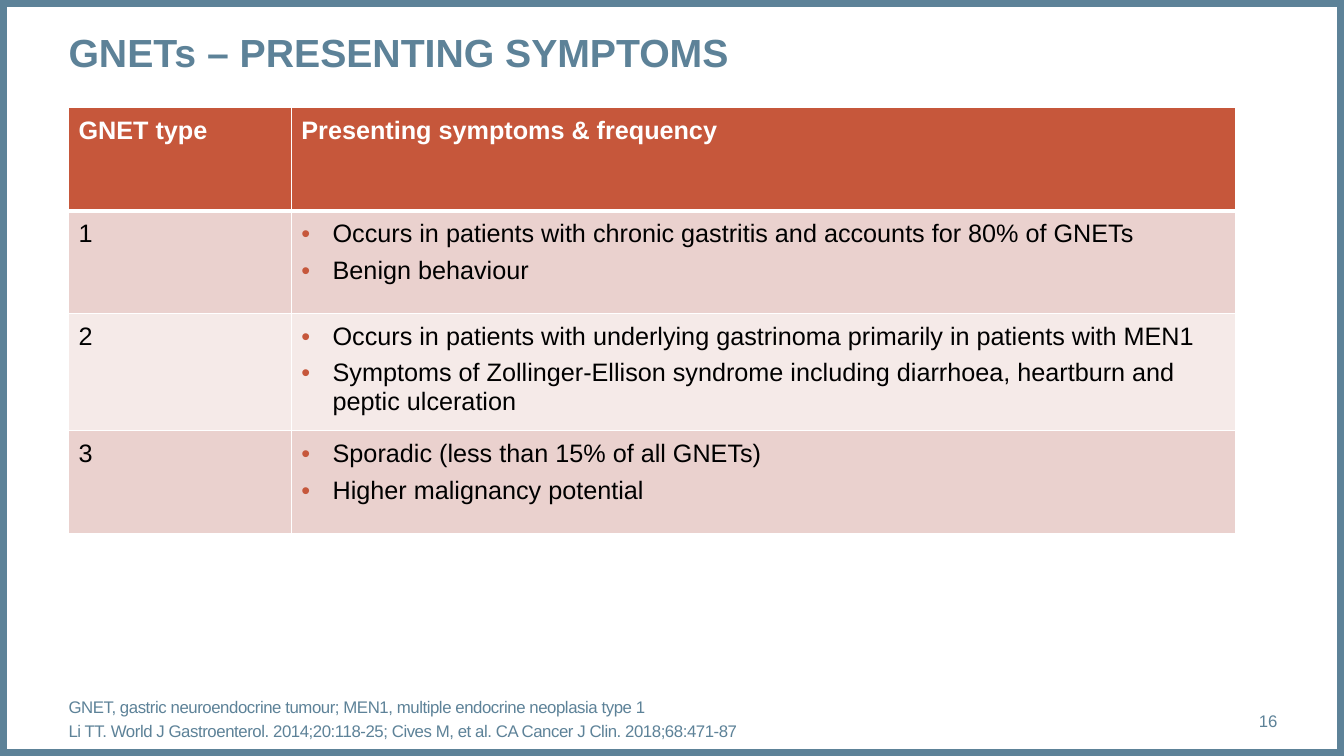
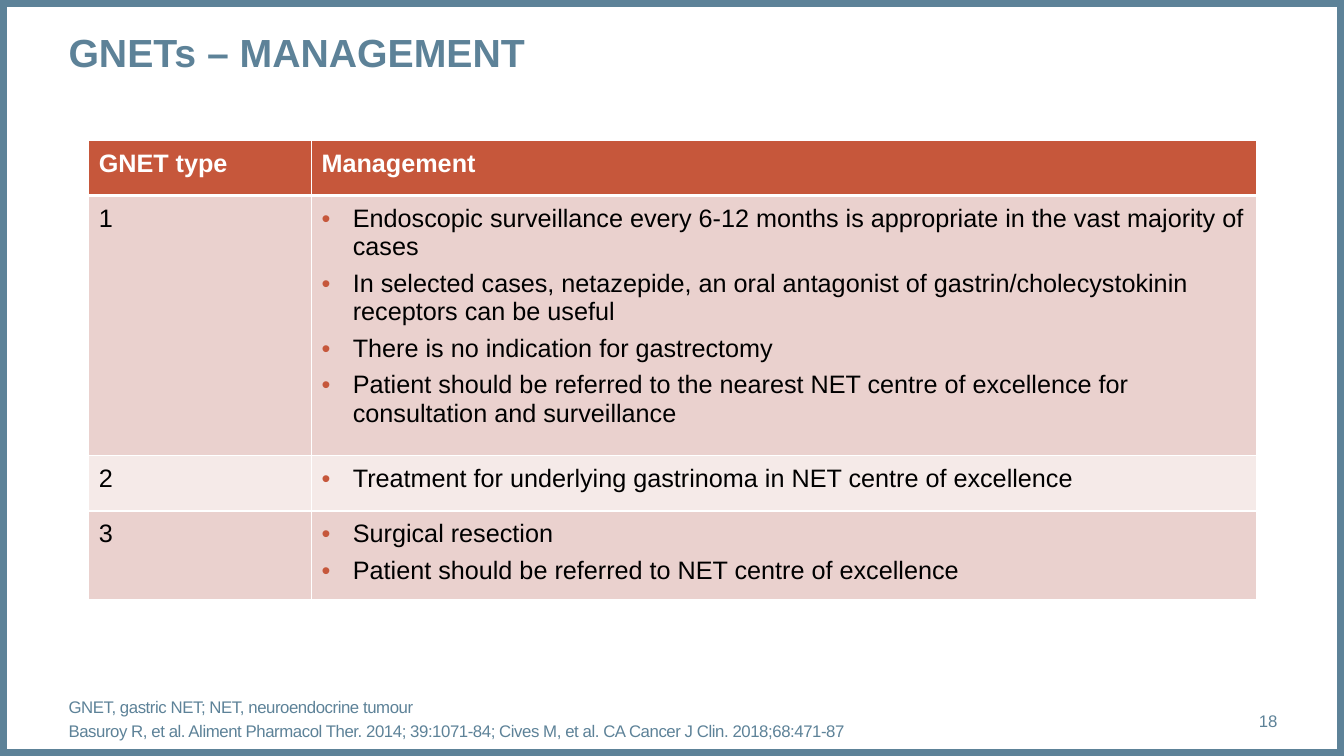
from pptx import Presentation
from pptx.dml.color import RGBColor
from pptx.enum.shapes import MSO_SHAPE as Shape
from pptx.enum.text import MSO_ANCHOR as Anchor, PP_ALIGN as Align
from pptx.oxml import parse_xml
from pptx.oxml.ns import nsdecls
from pptx.util import Inches, Pt


class Theme:
    font = "Arial"
    blue = RGBColor.from_string("5D8298")
    rust = RGBColor.from_string("C6573B")
    white = RGBColor.from_string("FFFFFF")
    black = RGBColor.from_string("000000")
    bands = [RGBColor.from_string("EAD1CE"), RGBColor.from_string("F5EAE8")]
    title_size, table_size, footer_size = Pt(28), Pt(18), Pt(12)


WIDTH, HEIGHT = Inches(13.33), Inches(7.5)
LEFT = 0.68
COLUMNS = [2.21, 9.37]

SLIDES = [
    {
        "title": "GNETs – PRESENTING SYMPTOMS",
        "number": "16",
        "table_at": (LEFT, 1.07),
        "row_heights": [1.02] * 4,
        "headings": ["GNET type", "Presenting symptoms & frequency"],
        "types": [
            ["Occurs in patients with chronic gastritis and accounts for 80% of GNETs",
             "Benign behaviour"],
            ["Occurs in patients with underlying gastrinoma primarily in patients with MEN1",
             "Symptoms of Zollinger-Ellison syndrome including diarrhoea, heartburn and peptic ulceration"],
            ["Sporadic (less than 15% of all GNETs)",
             "Higher malignancy potential"],
        ],
        "footnotes": [
            "GNET, gastric neuroendocrine tumour; MEN1, multiple endocrine neoplasia type 1",
            "Li TT. World J Gastroenterol. 2014;20:118-25; Cives M, et al. CA Cancer J Clin. 2018;68:471-87",
        ],
    },
    {
        "title": "GNETs – MANAGEMENT",
        "number": "18",
        "table_at": (0.88, 1.39),
        "row_heights": [0.55, 2.58, 0.55, 0.88],
        "headings": ["GNET type", "Management"],
        "types": [
            ["Endoscopic surveillance every 6-12 months is appropriate in the vast majority of cases",
             "In selected cases, netazepide, an oral antagonist of gastrin/cholecystokinin receptors can be useful",
             "There is no indication for gastrectomy",
             "Patient should be referred to the nearest NET centre of excellence for consultation and surveillance"],
            ["Treatment for underlying gastrinoma in NET centre of excellence"],
            ["Surgical resection",
             "Patient should be referred to NET centre of excellence"],
        ],
        "footnotes": [
            "GNET, gastric NET; NET, neuroendocrine tumour",
            "Basuroy R, et al. Aliment Pharmacol Ther. 2014; 39:1071-84; Cives M, et al. CA Cancer J Clin. 2018;68:471-87",
        ],
    },
]


def write(frame, lines, size, color, bold=False):
    """Fill a text frame with one paragraph per line, all in one style."""
    frame.word_wrap = True
    frame.text = "\n".join(lines)
    for para in frame.paragraphs:
        for span in para.runs:
            span.font.name, span.font.size = Theme.font, size
            span.font.color.rgb, span.font.bold = color, bold
    return frame.paragraphs


def add_text(page, at, lines, size, anchor=Anchor.TOP, bold=False):
    """Add a blue text box without margins."""
    box = page.shapes.add_textbox(*[Inches(length) for length in at])
    frame = box.text_frame
    frame.margin_left = frame.margin_top = frame.margin_right = frame.margin_bottom = 0
    frame.vertical_anchor = anchor
    return write(frame, lines, size, Theme.blue, bold)


deck = Presentation()
deck.slide_width, deck.slide_height = WIDTH, HEIGHT

for content in SLIDES:
    page = deck.slides.add_slide(deck.slide_layouts[6])

    # Border around the slide
    border = page.shapes.add_shape(Shape.RECTANGLE, 0, 0, WIDTH, HEIGHT)
    border.shadow.inherit = False
    border.fill.background()
    border.line.color.rgb, border.line.width = Theme.blue, Pt(10)

    # Title
    add_text(page, (LEFT, 0.28, 11.99, 0.94), [content["title"]], Theme.title_size, bold=True)

    # Footnotes and slide number
    for para in add_text(page, (LEFT, 6.95, 11.13, 0.4), content["footnotes"],
                         Theme.footer_size, Anchor.BOTTOM):
        para.space_before = Pt(3)
        for span in para.runs:
            span.font._element.set("spc", "-30")
    number = add_text(page, (11.5, 6.95, 1.17, 0.4), [content["number"]],
                      Theme.footer_size, Anchor.MIDDLE)
    number[0].alignment = Align.RIGHT

    # Table: a heading row, then one row per GNET type
    rows = [[[heading] for heading in content["headings"]]]
    rows += [[[str(kind)], points] for kind, points in enumerate(content["types"], 1)]
    heights = content["row_heights"]
    left, top = content["table_at"]
    table = page.shapes.add_table(len(rows), len(COLUMNS), Inches(left), Inches(top),
                                  Inches(sum(COLUMNS)), Inches(sum(heights))).table
    for column, width in zip(table.columns, COLUMNS):
        column.width = Inches(width)

    for row_index, row in enumerate(rows):
        table.rows[row_index].height = Inches(heights[row_index])
        is_heading = row_index == 0
        for column_index, lines in enumerate(row):
            cell = table.cell(row_index, column_index)
            cell.margin_left = cell.margin_right = Inches(0.1)
            cell.margin_top = cell.margin_bottom = Inches(0.09)
            cell.fill.solid()
            cell.fill.fore_color.rgb = Theme.rust if is_heading else Theme.bands[(row_index - 1) % 2]
            paragraphs = write(cell.text_frame, lines, Theme.table_size,
                               Theme.white if is_heading else Theme.black, is_heading)

            # Paragraph gaps, and bullets in the second column
            for para in paragraphs:
                para.space_after = Pt(6)
                if column_index == 1 and not is_heading:
                    props = para._p.get_or_add_pPr()
                    props.set("marL", str(Inches(0.31)))
                    props.set("indent", str(-Inches(0.31)))
                    for bullet in (f'<a:buClr {nsdecls("a")}><a:srgbClr val="{Theme.rust}"/></a:buClr>',
                                   f'<a:buFont {nsdecls("a")} typeface="{Theme.font}"/>',
                                   f'<a:buChar {nsdecls("a")} char="•"/>'):
                        props.append(parse_xml(bullet))

            # White rules, thicker under the heading row
            rules = {"lnL": 1, "lnR": 1, "lnT": 3 if row_index == 1 else 1,
                     "lnB": 3 if is_heading else 1}
            for position, (side, points) in enumerate(rules.items()):
                cell._tc.get_or_add_tcPr().insert(position, parse_xml(
                    f'<a:{side} {nsdecls("a")} w="{Pt(points)}"><a:solidFill>'
                    f'<a:srgbClr val="{Theme.white}"/></a:solidFill></a:{side}>'))

deck.save("out.pptx")
